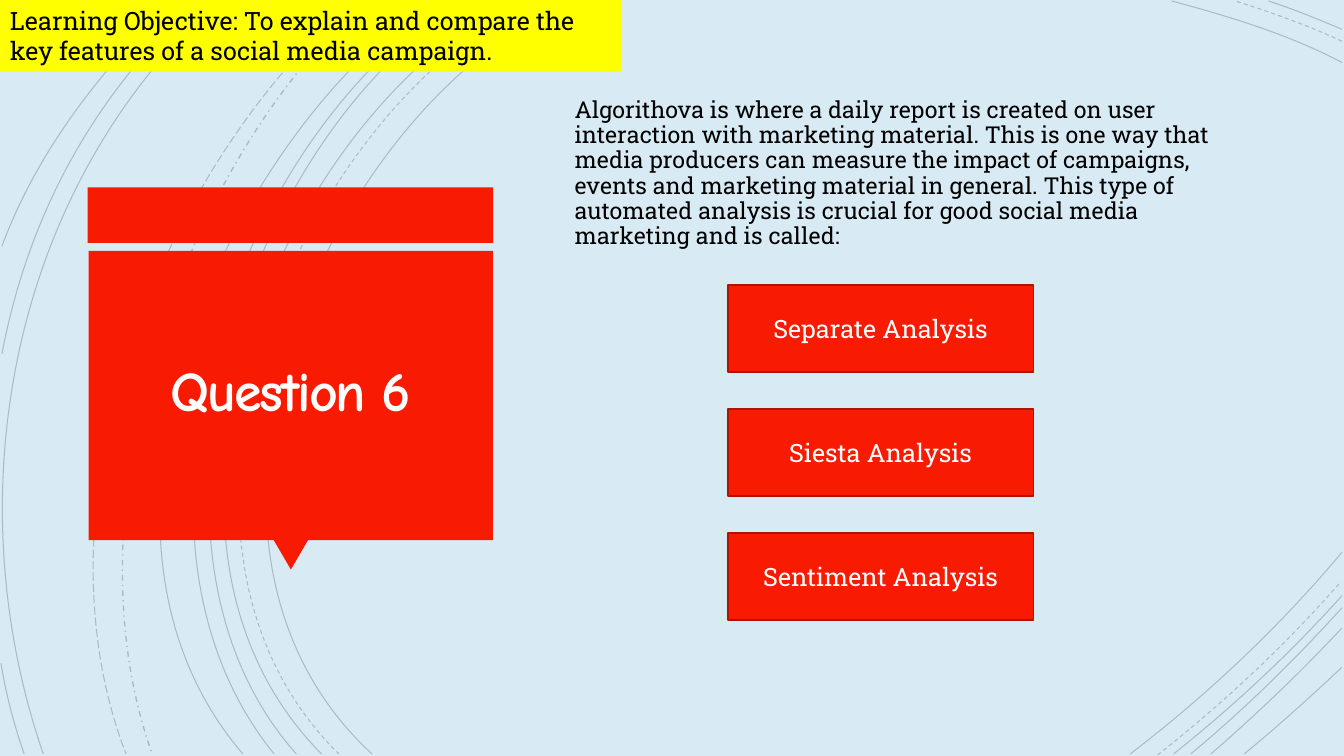
from lxml import etree
from pptx import Presentation
from pptx.dml.color import RGBColor
from pptx.enum.dml import MSO_LINE
from pptx.enum.shapes import MSO_SHAPE
from pptx.enum.text import MSO_ANCHOR, MSO_AUTO_SIZE, PP_ALIGN
from pptx.oxml.ns import qn
from pptx.util import Inches, Pt

SOLID, DASH = MSO_LINE.SOLID, MSO_LINE.DASH
LONG_DASH, DASH_DOT = MSO_LINE.LONG_DASH, MSO_LINE.DASH_DOT
RECTANGLE, TRIANGLE = MSO_SHAPE.RECTANGLE, MSO_SHAPE.ISOSCELES_TRIANGLE
MIDDLE, LEFT, CENTER = MSO_ANCHOR.MIDDLE, PP_ALIGN.LEFT, PP_ALIGN.CENTER
RED, DARK_RED, YELLOW = "F81B02", "AF1301", "FFFF00"
BLACK, WHITE, PALE_BLUE = "000000", "FFFFFF", "D8EAF3"
SLAB = "Roboto Slab"


def add_block(kind, left, top, width, height, fill):
    block = slide.shapes.add_shape(
        kind, Inches(left), Inches(top), Inches(width), Inches(height))
    block.shadow.inherit = False
    block.fill.solid()
    block.fill.fore_color.rgb = RGBColor.from_string(fill)
    block.line.fill.background()
    return block


def write(shape, text, size, color, font=SLAB, align=LEFT, spacing=1.0):
    """Set one paragraph of text, centred vertically, and return its run."""
    frame = shape.text_frame
    frame.text = text
    frame.word_wrap = True
    frame.auto_size = MSO_AUTO_SIZE.NONE
    frame.vertical_anchor = MIDDLE
    paragraph = frame.paragraphs[0]
    paragraph.alignment = align
    paragraph.line_spacing = spacing
    run = paragraph.runs[0]
    run.font.size = Pt(size)
    run.font.name = font
    run.font.color.rgb = RGBColor.from_string(color)
    return run


deck = Presentation()
deck.slide_width, deck.slide_height = Inches(13.33), Inches(7.5)
slide = deck.slides.add_slide(deck.slide_layouts[5])
slide.background.fill.solid()
slide.background.fill.fore_color.rgb = RGBColor.from_string(PALE_BLUE)

# Background arcs: start, two control points, end, dash, width
arcs = [
    ((5.65, 0), (3.15, 1.15), (1.43, 5.4), (3.69, 7.48), SOLID, 0.75),
    ((13.31, 0.62), (12.78, 0.34), (12.18, 0.16), (11.62, 0.01), SOLID, 0.75),
    ((11.21, 7.48), (11.97, 6.9), (12.69, 6.22), (13.31, 5.48), SOLID, 0.75),
    ((5.25, 0), (2.85, 1.25), (1.23, 5.37), (3.36, 7.48), DASH, 0.75),
    ((13.31, 0.41), (12.97, 0.25), (12.6, 0.12), (12.25, 0.01), DASH, 0.75),
    ((11.48, 7.49), (12.13, 6.98), (12.75, 6.4), (13.3, 5.77), DASH, 0.75),
    ((5.06, 0), (2.7, 1.27), (1.1, 5.37), (3.19, 7.48), SOLID, 0.75),
    ((13.31, 0.29), (13.07, 0.19), (12.83, 0.09), (12.58, 0.01), SOLID, 0.75),
    ((11.64, 7.48), (12.23, 7.01), (12.8, 6.48), (13.31, 5.91), SOLID, 0.75),
    ((4.64, 0), (2.44, 1.33), (1.1, 5.41), (2.94, 7.48), SOLID, 0.75),
    ((11.81, 7.48), (12.34, 7.04), (12.84, 6.55), (13.31, 6.03), SOLID, 0.75),
    ((4.51, 0), (2.31, 1.38), (0.97, 5.33), (2.72, 7.48), SOLID, 0.75),
    ((12.01, 7.48), (12.46, 7.09), (12.9, 6.67), (13.31, 6.23), SOLID, 0.75),
    ((4.27, 0), (2.17, 1.47), (0.53, 5.29), (2.41, 7.48), SOLID, 0.75),
    ((12.34, 7.48), (12.67, 7.21), (12.99, 6.92), (13.31, 6.62), SOLID, 0.75),
    ((3.63, 0), (1.76, 1.66), (0.65, 5.09), (1.51, 7.48), DASH_DOT, 1),
    ((3.51, 0), (1.57, 1.69), (0.29, 4.99), (1.25, 7.48), LONG_DASH, 0.75),
    ((2.17, 0), (0.11, 1.85), (-0.46, 4.9), (0.43, 7.48), SOLID, 0.75),
    ((1.95, 0.01), (0.92, 0.96), (0.28, 2.14), (0.02, 3.51), SOLID, 0.75),
    ((0.01, 6.58), (0.06, 6.89), (0.14, 7.19), (0.24, 7.48), SOLID, 0.75),
    ((1.72, 0), (1, 0.69), (0.37, 1.5), (0.02, 2.44), SOLID, 0.75),
]
for *corners, dash, width in arcs:
    points = [(Inches(x), Inches(y)) for x, y in corners]
    outline = slide.shapes.build_freeform(*points[0])
    outline.add_line_segments(points[1:], close=False)
    arc = outline.convert_to_shape()
    # Merge the three straight segments into one Bézier curve
    segments = list(arc._element.iter(qn("a:lnTo")))
    curve = etree.SubElement(segments[0].getparent(), qn("a:cubicBezTo"))
    for segment in segments:
        curve.append(segment[0])
        segment.getparent().remove(segment)
    arc.shadow.inherit = False
    arc.fill.background()
    arc.line.width = Pt(width)
    arc.line.color.rgb = RGBColor.from_string(BLACK)
    arc.line.dash_style = dash
    ink = arc.line._ln.find(".//" + qn("a:srgbClr"))
    etree.SubElement(ink, qn("a:alpha")).set("val", "20000")

# Question card
add_block(RECTANGLE, 0.87, 1.86, 4.02, 0.55, RED)
pointer = add_block(TRIANGLE, 2.71, 5.35, 0.35, 0.3, RED)
pointer.rotation = 180
add_block(RECTANGLE, 0.88, 2.49, 4.01, 2.87, RED)

title = slide.shapes.title
title.left, title.top = Inches(0.97), Inches(2.57)
title.width, title.height = Inches(3.83), Inches(2.69)
heading = write(title, "Question 6", 40, "FFFEFF", "Comic Neue", CENTER, 0.85)
heading.font.bold = True
heading._r.get_or_add_rPr().set("spc", "-150")
margin = Inches(0.25)
title_frame = title.text_frame
title_frame.margin_left = title_frame.margin_right = margin
title_frame.margin_top = title_frame.margin_bottom = margin
slide.shapes._spTree.append(title._element)  # bring in front of the card

question = slide.shapes.add_textbox(
    Inches(5.6), Inches(0.88), Inches(6.87), Inches(1.69))
write(question,
      "Algorithova is where a daily report is created on user interaction with "
      "marketing material. This is one way that media producers can measure the "
      "impact of campaigns, events and marketing material in general. This type "
      "of automated analysis is crucial for good social media marketing and is "
      "called:", 16.65, BLACK, spacing=0.9)

for row, answer in enumerate(
        ("Separate Analysis", "Siesta Analysis", "Sentiment Analysis")):
    button = add_block(RECTANGLE, 7.22, 2.83 + row * 1.23, 3.03, 0.86, RED)
    button.line.color.rgb = RGBColor.from_string(DARK_RED)
    button.line.width = Pt(1.25)
    write(button, answer, 18, WHITE, align=CENTER)

objective = add_block(RECTANGLE, 0, 0, 6.16, 0.71, YELLOW)
write(objective,
      "Learning Objective: To explain and compare the key features of a social "
      "media campaign.", 18, BLACK)

deck.save("out.pptx")
